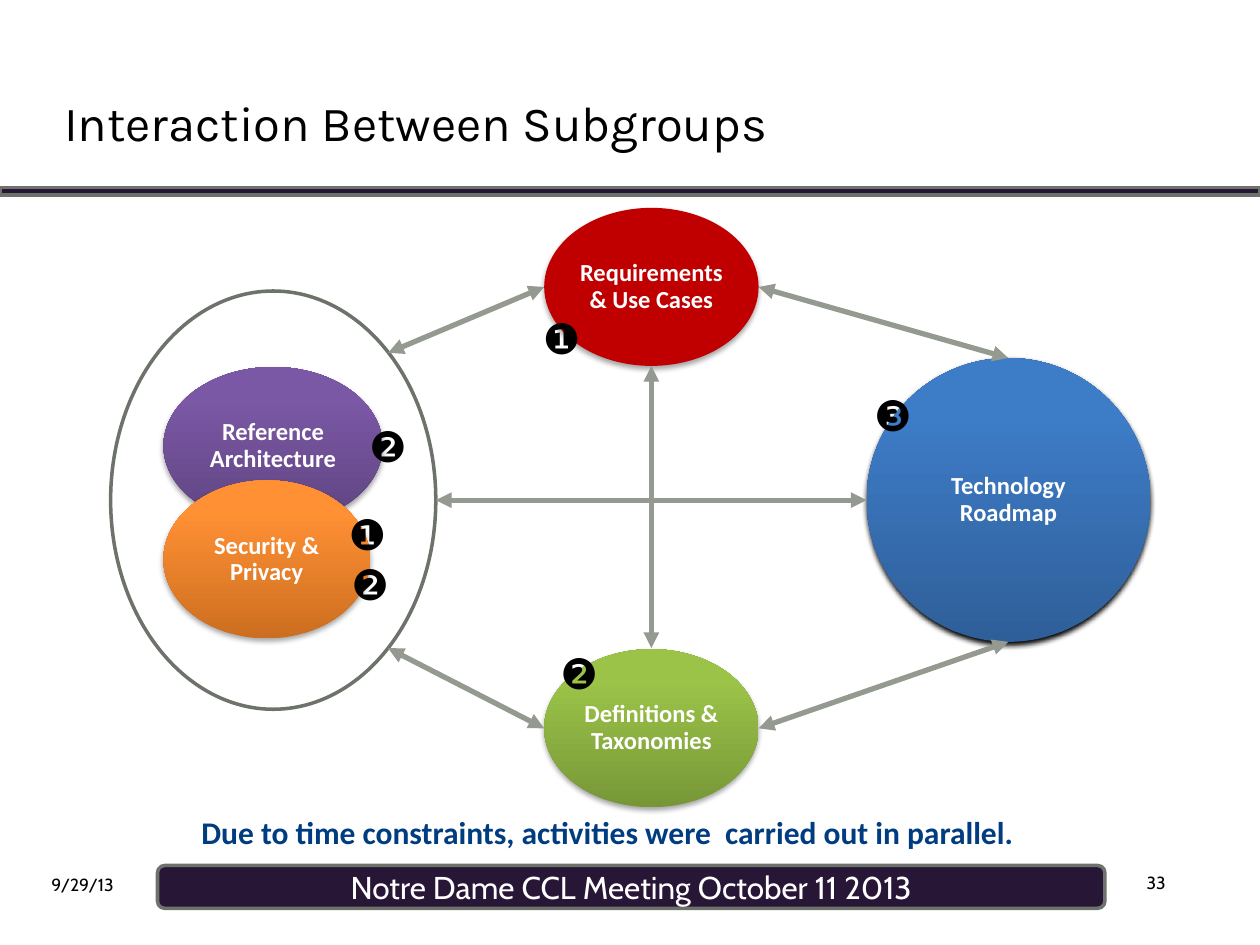
"""Build the slide on how the subgroups interact."""
from lxml.etree import SubElement
from pptx import Presentation
from pptx.dml.color import RGBColor
from pptx.enum.shapes import MSO_CONNECTOR, MSO_SHAPE
from pptx.enum.text import MSO_ANCHOR, PP_ALIGN
from pptx.oxml import parse_xml
from pptx.oxml.ns import nsdecls, qn
from pptx.util import Pt


def color(value):
    return RGBColor.from_string(value)


def write(shape, text, size=14, font="Calibri", ink="FFFFFF", bold=False, align=PP_ALIGN.LEFT,
          anchor=MSO_ANCHOR.TOP, wrap=True, margins=(7.2, 3.6), spacing=1.0):
    frame = shape.text_frame
    frame.word_wrap = wrap
    frame.vertical_anchor = anchor
    frame.margin_left = frame.margin_right = Pt(margins[0])
    frame.margin_top = frame.margin_bottom = Pt(margins[1])
    para = frame.paragraphs[0]
    para.alignment = align
    para.line_spacing = spacing
    span = para.add_run()
    span.text = text
    span.font.name, span.font.size, span.font.bold = font, Pt(size), bold
    span.font.color.rgb = color(ink)


deck = Presentation()
deck.slide_width, deck.slide_height = Pt(720), Pt(540)
page = deck.slides.add_slide(deck.slide_layouts[5])
shapes = page.shapes

title = shapes.title
title.left, title.top, title.width, title.height = Pt(36.7), Pt(37.4), Pt(646.6), Pt(64.1)
write(title, "Interaction Between Subgroups", size=28, font="Karla", ink="000000",
      anchor=MSO_ANCHOR.MIDDLE, margins=(0, 0))

bars = [
    (MSO_SHAPE.ROUNDED_RECTANGLE, 90, 494.6, 541.4, 24.5, "Notre Dame CCL Meeting October 11 2013"),
    (MSO_SHAPE.RECTANGLE, 0, 107.3, 720, 4.3, ""),
]
for kind, left, top, width, height, text in bars:
    bar = shapes.add_shape(kind, Pt(left), Pt(top), Pt(width), Pt(height))
    bar.shadow.inherit = False
    bar.fill.solid()
    bar.fill.fore_color.rgb = color("281637")
    bar.line.color.rgb = color("6D726B")
    bar.line.width = Pt(2)
    if text:
        write(bar, text, size=18, font="Cabin", align=PP_ALIGN.CENTER, anchor=MSO_ANCHOR.MIDDLE)

ring = shapes.add_shape(MSO_SHAPE.OVAL, Pt(63.2), Pt(166.3), Pt(185.8), Pt(239))
ring.shadow.inherit = False
ring.fill.background()
ring.line.color.rgb = color("6D726B")
ring.line.width = Pt(2)

subgroups = [
    ("Technology Roadmap", 495.2, 204.6, 162.2, 162.2, "2F5F99", "3D7CC7", 100),
    ("Requirements & Use Cases", 311, 118.8, 122.5, 90.3, "C00000", "C00000", 35),
    ("Definitions & Taxonomies", 311, 371, 122.5, 90.3, "779737", "9BC348", 35),
    ("Reference Architecture", 93.4, 209.7, 125.3, 90.3, "5F4480", "7B58A6", 35),
    ("Security & Privacy", 93.4, 274.5, 118.1, 90.3, "CC6E20", "FF9034", 35),
]
for text, left, top, width, height, dark, light, opacity in subgroups:
    oval = shapes.add_shape(MSO_SHAPE.OVAL, Pt(left), Pt(top), Pt(width), Pt(height))
    if dark == light:
        oval.fill.solid()
        oval.fill.fore_color.rgb = color(dark)
    else:
        oval.fill.gradient()
        oval.fill.gradient_angle = 90
        for stop, position, shade in zip(oval.fill.gradient_stops, (0, 0.8), (dark, light)):
            stop.position = position
            stop.color.rgb = color(shade)
    oval.line.fill.background()
    oval.element.spPr.append(parse_xml(
        f'<a:effectLst {nsdecls("a")}><a:outerShdw blurRad="39370" dist="22860" dir="5400000" '
        f'rotWithShape="0"><a:srgbClr val="000000"><a:alpha val="{opacity * 1000}"/></a:srgbClr>'
        '</a:outerShdw></a:effectLst>'))
    write(oval, text, bold=True, align=PP_ALIGN.CENTER, anchor=MSO_ANCHOR.MIDDLE,
          margins=(1, 1), spacing=0.9)

arrows = [
    (221.8, 201.6, 311, 164),
    (221.8, 370.4, 311, 416.2),
    (372.2, 209.1, 372.2, 370.4),
    (433.5, 164, 576.2, 204.6),
    (433.5, 416.2, 576.2, 366.8),
    (249, 285.8, 495.2, 285.8),
]
for ends in arrows:
    arrow = shapes.add_connector(MSO_CONNECTOR.STRAIGHT, *map(Pt, ends))
    arrow.line.color.rgb = color("949A90")
    arrow.line.width = Pt(3)
    outline = arrow.line._get_or_add_ln()
    for tag in ("a:headEnd", "a:tailEnd"):
        SubElement(outline, qn(tag), type="triangle")
    SubElement(arrow._element.spPr, qn("a:effectLst"))

steps = [("❷", 313.2, 366.5), ("❷", 203.8, 236.9), ("❸", 492.5, 218.9),
         ("❶", 303.1, 175), ("❷", 193.7, 315.4), ("❶", 192.2, 287.3)]
for mark, left, top in steps:
    badge = shapes.add_textbox(Pt(left), Pt(top), Pt(36), Pt(36))
    write(badge, mark, size=24, font="Cabin", ink="000000", wrap=False)

note = shapes.add_textbox(Pt(108), Pt(460.8), Pt(504.7), Pt(29))
write(note, "Due to time constraints, activities were  carried out in parallel.",
      size=18, ink="003C80", bold=True)

date = shapes.add_textbox(Pt(22.3), Pt(496.1), Pt(53.3), Pt(19.4))
write(date, "9/29/13", size=10, font="Cabin", ink="000000", wrap=False)

number = shapes.add_textbox(Pt(655.2), Pt(498.2), Pt(28.8), Pt(12.2))
write(number, "33", size=10, font="Cabin", ink="000000", margins=(0, 0))

deck.save("out.pptx")
